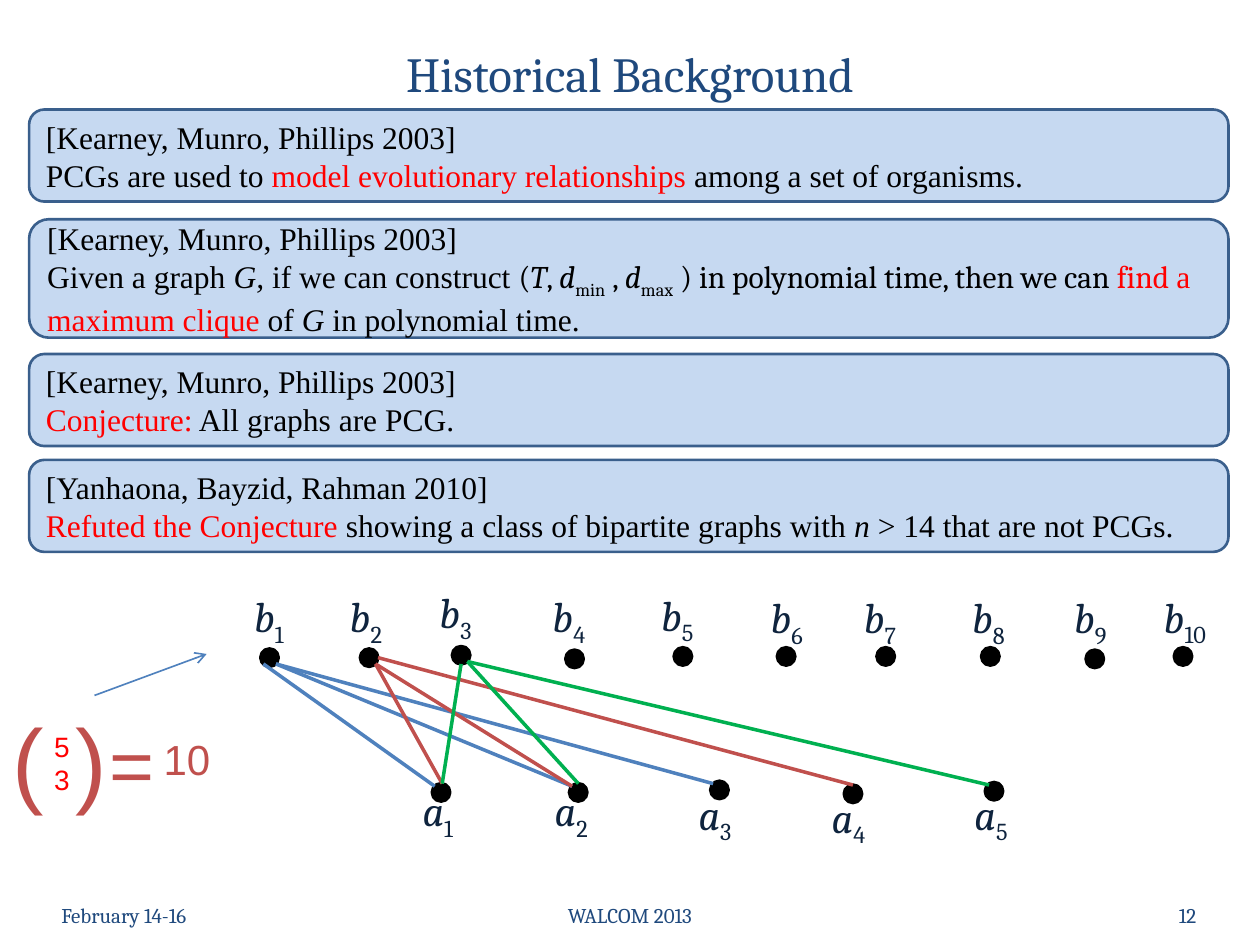
from lxml.etree import SubElement
from pptx import Presentation
from pptx.dml.color import RGBColor
from pptx.enum.shapes import MSO_CONNECTOR, MSO_SHAPE
from pptx.enum.text import MSO_ANCHOR, PP_ALIGN
from pptx.oxml.ns import qn
from pptx.util import Pt

COLORS = {
    "title": "1F497D", "label": "0F243E", "card": "C6D9F1", "border": "3A5F8C",
    "black": "000000", "highlight": "FF0000",
    "blue": "4F81BD", "red": "C0504D", "green": "00B050",
}


def write(frame, paragraphs, size, font, color, align=PP_ALIGN.LEFT, anchor=MSO_ANCHOR.MIDDLE):
    """Fill a frame; each run is (text, style), style naming italic, sub, highlight or Cambria."""
    frame.word_wrap = True
    frame.vertical_anchor = anchor
    for index, runs in enumerate(paragraphs):
        paragraph = frame.paragraphs[0] if index == 0 else frame.add_paragraph()
        paragraph.alignment = align
        for text, style in runs:
            run = paragraph.add_run()
            run.text = text
            run.font.size = Pt(size)
            run.font.name = "Cambria" if "Cambria" in style else font
            run.font.italic = "italic" in style
            run.font.color.rgb = RGBColor.from_string(
                COLORS["highlight" if "highlight" in style else color])
            if "sub" in style:
                run.font._element.set("baseline", "-25000")


def add_line(start, end, color, width):
    line = slide.shapes.add_connector(MSO_CONNECTOR.STRAIGHT, *map(Pt, start + end))
    line.line.color.rgb = RGBColor.from_string(COLORS[color])
    line.line.width = Pt(width)
    SubElement(line._element.spPr, qn("a:effectLst"))
    return line


prs = Presentation()
prs.slide_width, prs.slide_height = Pt(720), Pt(540)
slide = prs.slides.add_slide(prs.slide_layouts[5])

title = slide.shapes.title
title.left, title.top, title.width, title.height = Pt(0), Pt(0), Pt(720), Pt(82.8)
write(title.text_frame, [[("Historical Background", "")]], 28, "Cambria", "title", PP_ALIGN.CENTER)

# Footer
for text, left, width, align in [
    ("February 14-16", 28, 168, PP_ALIGN.LEFT),
    ("WALCOM 2013", 246, 228, PP_ALIGN.CENTER),
    ("12", 522.7, 168, PP_ALIGN.RIGHT),
]:
    footer = slide.shapes.add_textbox(Pt(left), Pt(508.3), Pt(width), Pt(28.8))
    write(footer.text_frame, [[(text, "")]], 12, "Cambria", "title", align)

# Results from the literature
kearney = [("[Kearney, Munro, Phillips 2003]", "")]
results = [
    (62.6, 52.6, [kearney, [
        ("PCGs are used to ", ""),
        ("model evolutionary relationships ", "highlight"),
        ("among a set of organisms.", "")]]),
    (125.3, 67.7, [kearney, [
        ("Given a graph ", ""), ("G, ", "italic"), ("if we can construct ", ""),
        ("(", "Cambria"), ("T", "Cambria italic"), (", ", "Cambria"),
        ("d", "Cambria italic"), ("min", "Cambria sub"), (" , ", "Cambria"),
        ("d", "Cambria italic"), ("max", "Cambria sub"),
        (" ) in polynomial time, then we can ", "Cambria"),
        ("find ", "Cambria highlight"), ("a maximum clique ", "highlight"),
        ("of ", ""), ("G ", "italic"), ("in polynomial time.", "")]]),
    (202.3, 52.6, [kearney, [
        ("Conjecture:", "highlight"), (" All graphs are PCG.", "")]]),
    (262.8, 52.6, [[("[Yanhaona, Bayzid, Rahman 2010]", "")], [
        ("Refuted the Conjecture", "highlight"),
        (" showing a class of bipartite graphs with ", ""),
        ("n", "italic"), (" > 14 that are not PCGs.", "")]]),
]
for top, height, paragraphs in results:
    card = slide.shapes.add_shape(
        MSO_SHAPE.FLOWCHART_ALTERNATE_PROCESS, Pt(16.6), Pt(top), Pt(685.4), Pt(height))
    card.shadow.inherit = False
    card.fill.solid()
    card.fill.fore_color.rgb = RGBColor.from_string(COLORS["card"])
    card.line.color.rgb = RGBColor.from_string(COLORS["border"])
    card.line.width = Pt(1.5)
    write(card.text_frame, paragraphs, 18, "Times New Roman", "black")

# Bipartite graph: dot left, dot top, label left, label top
vertices = {
    "b": [(149, 370.8, 136.8, 341.3), (205.9, 370.8, 192.2, 341.3),
          (258.5, 369.4, 243.4, 339.1), (323.3, 371.5, 308.2, 341.3),
          (385.2, 370.1, 370.1, 340.6), (444.2, 370.1, 432.7, 342),
          (501.1, 370.1, 486, 342), (560.9, 370.1, 547.9, 342),
          (620.6, 371.5, 606.2, 342), (671, 370.1, 660.2, 341.6)],
    "a": [(247, 447.8, 233.3, 452.2), (325.4, 447.8, 309.6, 452.2),
          (406.1, 446.4, 391.7, 454.3), (482.4, 448.6, 468, 455.8),
          (563, 447.1, 549.4, 454.3)],
}
for letter, places in vertices.items():
    for number, (dot_left, dot_top, label_left, label_top) in enumerate(places, 1):
        dot = slide.shapes.add_shape(
            MSO_SHAPE.OVAL, Pt(dot_left), Pt(dot_top), Pt(10), Pt(10))
        dot.shadow.inherit = False
        dot.fill.solid()
        dot.fill.fore_color.rgb = RGBColor.from_string(COLORS["black"])
        dot.line.color.rgb = RGBColor.from_string(COLORS["black"])
        dot.line.width = Pt(2)

        label = slide.shapes.add_textbox(Pt(label_left), Pt(label_top), Pt(33.8), Pt(25.2))
        label.text_frame.margin_left = label.text_frame.margin_right = 0
        write(label.text_frame, [[(letter, "italic"), (str(number), "sub")]],
              24, "Cambria", "label", PP_ALIGN.CENTER)

edges = [
    ("blue", (150.5, 379.4), (248.4, 449.3)),
    ("blue", (157.7, 379.4), (326.9, 449.3)),
    ("blue", (157.7, 379.4), (407.5, 447.8)),
    ("red", (216, 375.8), (487.4, 448.6)),
    ("red", (214.6, 379.4), (252.7, 447.8)),
    ("red", (214.6, 379.4), (326.9, 449.3)),
    ("green", (263.5, 379.4), (252.7, 447.8)),
    ("green", (267.1, 378), (330.5, 447.8)),
    ("green", (267.1, 378), (565.2, 448.6)),
]
for color, start, end in edges:
    add_line(start, end, color, 2)

# Binomial coefficient, with an arrow to the b vertices
for lines, left, top, width, height, size, color in [
    ("53", 23.8, 413.3, 30.2, 46.1, 16, "highlight"),
    ("(", 0, 397.4, 36, 72.7, 54, "red"),
    (")", 36, 397.4, 36, 72.7, 54, "red"),
    ("=", 55.4, 406.1, 66.2, 60.5, 44, "red"),
    (["10"], 86.4, 415.4, 84.2, 36.7, 24, "red"),
]:
    term = slide.shapes.add_textbox(Pt(left), Pt(top), Pt(width), Pt(height))
    write(term.text_frame, [[(line, "")] for line in lines], size, "Arial", color,
          anchor=MSO_ANCHOR.TOP)

arrow = add_line((54, 397.4), (118.1, 373.7), "blue", 0.94)
SubElement(arrow.line._get_or_add_ln(), qn("a:tailEnd"), type="arrow")

prs.save("out.pptx")
